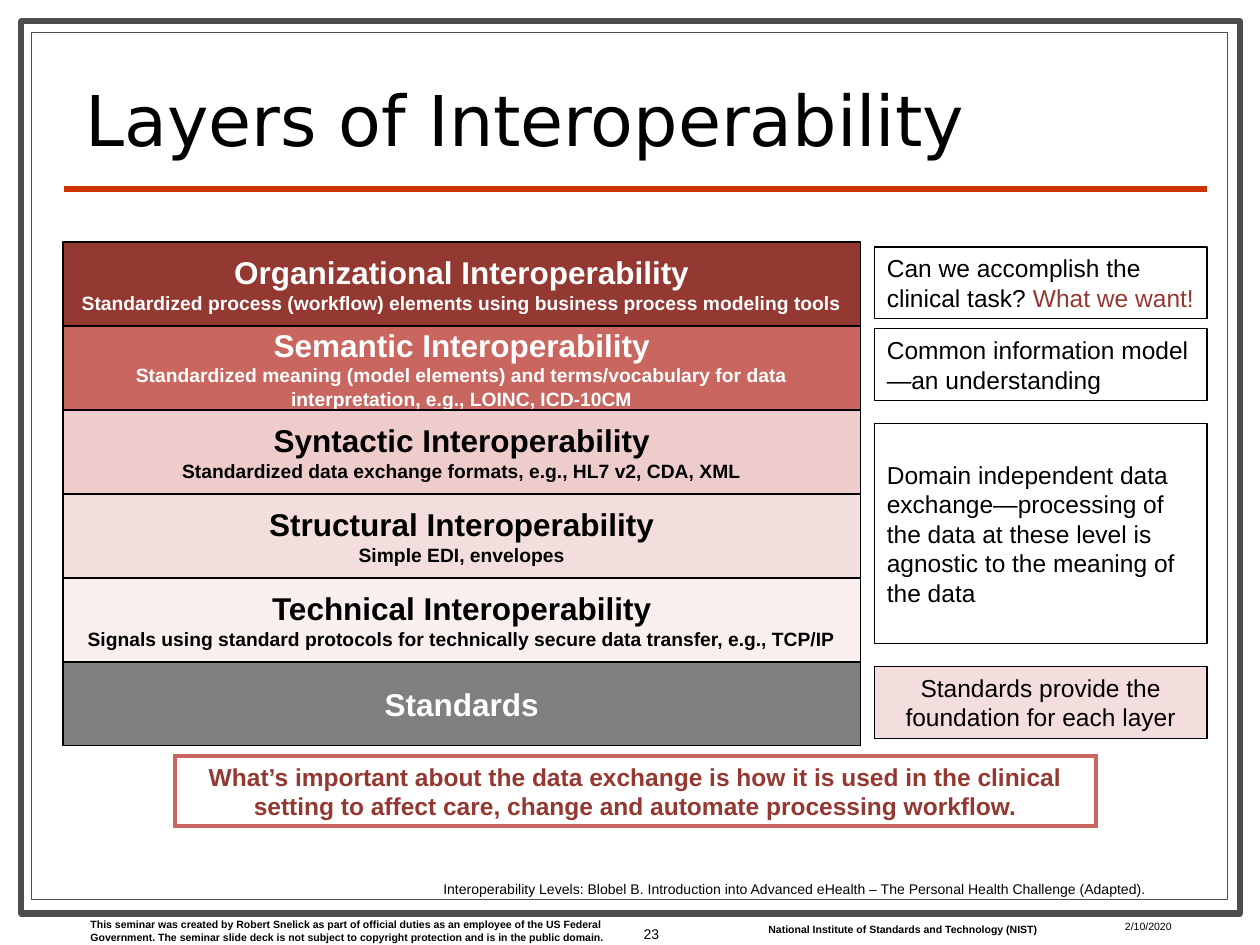
import pptx
import pptx.util
import pptx.dml.color
import pptx.enum.shapes
import pptx.enum.text
import pptx.oxml.ns
import lxml.etree

Inches = pptx.util.Inches
Pt = pptx.util.Pt
RGB = pptx.dml.color.RGBColor
SHAPE = pptx.enum.shapes.MSO_SHAPE
ALIGN = pptx.enum.text.PP_ALIGN
ANCHOR = pptx.enum.text.MSO_ANCHOR

BLACK = RGB(0x00, 0x00, 0x00)
WHITE = RGB(0xFF, 0xFF, 0xFF)
DARK = RGB(0x4D, 0x4D, 0x4D)
GRAY = RGB(0x80, 0x80, 0x80)
ORANGE = RGB(0xCC, 0x33, 0x00)
BRICK = RGB(0x94, 0x38, 0x32)
ROSE = RGB(0xC9, 0x66, 0x60)
PINK = RGB(0xEE, 0xCC, 0xCC)
BLUSH = RGB(0xF3, 0xDE, 0xDD)
PALE = RGB(0xF9, 0xEF, 0xEE)

LAYERS = [
    ("Organizational Interoperability",
     "Standardized process (workflow) elements using business process modeling tools",
     BRICK, WHITE),
    ("Semantic Interoperability",
     "Standardized meaning (model elements) and terms/vocabulary for data "
     "interpretation, e.g., LOINC, ICD-10CM", ROSE, WHITE),
    ("Syntactic Interoperability",
     "Standardized data exchange formats, e.g., HL7 v2, CDA, XML", PINK, BLACK),
    ("Structural Interoperability", "Simple EDI, envelopes", BLUSH, BLACK),
    ("Technical Interoperability",
     "Signals using standard protocols for technically secure data transfer, e.g., TCP/IP",
     PALE, BLACK),
    ("Standards", None, GRAY, WHITE),
]

# Offset from the top of the column, height, text parts, fill, alignment
NOTES = [
    (0, 0.57, [("Can we accomplish the clinical task? ", BLACK),
               ("What we want!", BRICK)], None, ALIGN.LEFT),
    (0.65, 0.57, [("Common information model—an understanding", BLACK)],
     None, ALIGN.LEFT),
    (1.4, 1.75, [("Domain independent data exchange—processing of the data at "
                  "these level is agnostic to the meaning of the data", BLACK)],
     None, ALIGN.LEFT),
    (3.33, 0.57, [("Standards provide the foundation for each layer", BLACK)],
     BLUSH, ALIGN.CENTER),
]


def style(para, size, color, bold=False, font="Arial", align=ALIGN.LEFT):
    para.alignment = align
    for run in para.runs:
        run.font.name = font
        run.font.size = Pt(size)
        run.font.bold = bold
        run.font.color.rgb = color


def add_box(slide, left, top, width, height, fill, line=BLACK, weight=0.75,
            kind=SHAPE.RECTANGLE):
    box = slide.shapes.add_shape(
        kind, Inches(left), Inches(top), Inches(width), Inches(height))
    box.shadow.inherit = False
    if fill is None:
        box.fill.background()
    else:
        box.fill.solid()
        box.fill.fore_color.rgb = fill
    box.line.color.rgb = line
    box.line.width = Pt(weight)
    box.text_frame.word_wrap = True
    box.text_frame.vertical_anchor = ANCHOR.MIDDLE
    return box


def add_label(slide, left, top, width, height, text, size,
              anchor=ANCHOR.TOP, **looks):
    label = slide.shapes.add_textbox(
        Inches(left), Inches(top), Inches(width), Inches(height))
    frame = label.text_frame
    frame.word_wrap = True
    frame.vertical_anchor = anchor
    frame.text = text
    style(frame.paragraphs[0], size, BLACK, **looks)
    return frame.paragraphs[0]


def add_border(slide, left, top, width, height):
    add_box(slide, left, top, width, height, WHITE, DARK, 3.5)
    add_box(slide, left + 0.08, top + 0.09, width - 0.18, height - 0.2, WHITE, DARK)


def add_header(slide, left, top, width, height):
    title = add_label(slide, left, top, width, height, "Layers of Interoperability",
                      40, ANCHOR.BOTTOM, font="DejaVu Sans")
    title.line_spacing = 0.8
    # Rule below the title
    level = Inches(top + height + 0.18)
    rule = slide.shapes.add_connector(
        pptx.enum.shapes.MSO_CONNECTOR.STRAIGHT,
        Inches(left - 0.07), level, Inches(left + width + 0.08), level)
    rule.line.color.rgb = ORANGE
    rule.line.width = Pt(3)
    props = rule._element.spPr
    lxml.etree.SubElement(props, pptx.oxml.ns.qn("a:effectLst"))


def add_stack(slide, left, top, width, height):
    step = height / len(LAYERS)
    for row, (name, detail, fill, color) in enumerate(LAYERS):
        box = add_box(slide, left, top + row * step, width, step, fill)
        frame = box.text_frame
        frame.text = name
        style(frame.paragraphs[0], 18, color, True, align=ALIGN.CENTER)
        if detail:
            para = frame.add_paragraph()
            para.text = detail
            style(para, 11, color, True, align=ALIGN.CENTER)


def add_notes(slide, left, top, width):
    for drop, height, parts, fill, align in NOTES:
        box = add_box(slide, left, top + drop, width, height, fill)
        para = box.text_frame.paragraphs[0]
        for text, color in parts:
            run = para.add_run()
            run.text = text
        style(para, 14, BLACK, align=align)
        for run, (text, color) in zip(para.runs, parts):
            run.font.color.rgb = color


def add_message(slide, left, top, width, height):
    box = add_box(slide, left, top, width, height, ROSE, ROSE, kind=SHAPE.FRAME)
    box.adjustments[0] = 0.038
    box.text_frame.text = (
        "What’s important about the data exchange is how it is used in the clinical "
        "setting to affect care, change and automate processing workflow.")
    style(box.text_frame.paragraphs[0], 14, BRICK, True, align=ALIGN.CENTER)


def add_footer(slide, left, top):
    add_label(slide, left, top, 4.33, 0.3,
              "This seminar was created by Robert Snelick as part of official duties "
              "as an employee of the US Federal Government. The seminar slide deck is "
              "not subject to copyright protection and is in the public domain.",
              6, bold=True)
    add_label(slide, left + 4.13, top - 0.09, 0.58, 0.52, "23", 8,
              ANCHOR.MIDDLE, align=ALIGN.RIGHT)
    add_label(slide, left + 5.38, top + 0.04, 2.38, 0.2,
              "National Institute of Standards and Technology (NIST)", 6, bold=True)
    add_label(slide, left + 8.21, top + 0.01, 0.92, 0.17, "2/10/2020", 6)


def main():
    deck = pptx.Presentation()
    deck.slide_width = Inches(10)
    deck.slide_height = Inches(7.5)
    slide = deck.slides.add_slide(deck.slide_layouts[6])

    add_border(slide, 0.17, 0.17, 9.67, 7.08)
    add_header(slide, 0.58, 0.42, 8.92, 0.9)
    add_stack(slide, 0.5, 1.92, 6.33, 4)
    add_notes(slide, 6.94, 1.96, 2.64)
    add_message(slide, 1.38, 5.99, 7.33, 0.58)
    # Source line
    add_label(slide, 3.42, 6.94, 5.83, 0.24,
              "Interoperability Levels: Blobel B. Introduction into Advanced eHealth "
              "– The Personal Health Challenge (Adapted).", 8)
    add_footer(slide, 0.62, 7.24)
    deck.save("out.pptx")


if __name__ == "__main__":
    main()
